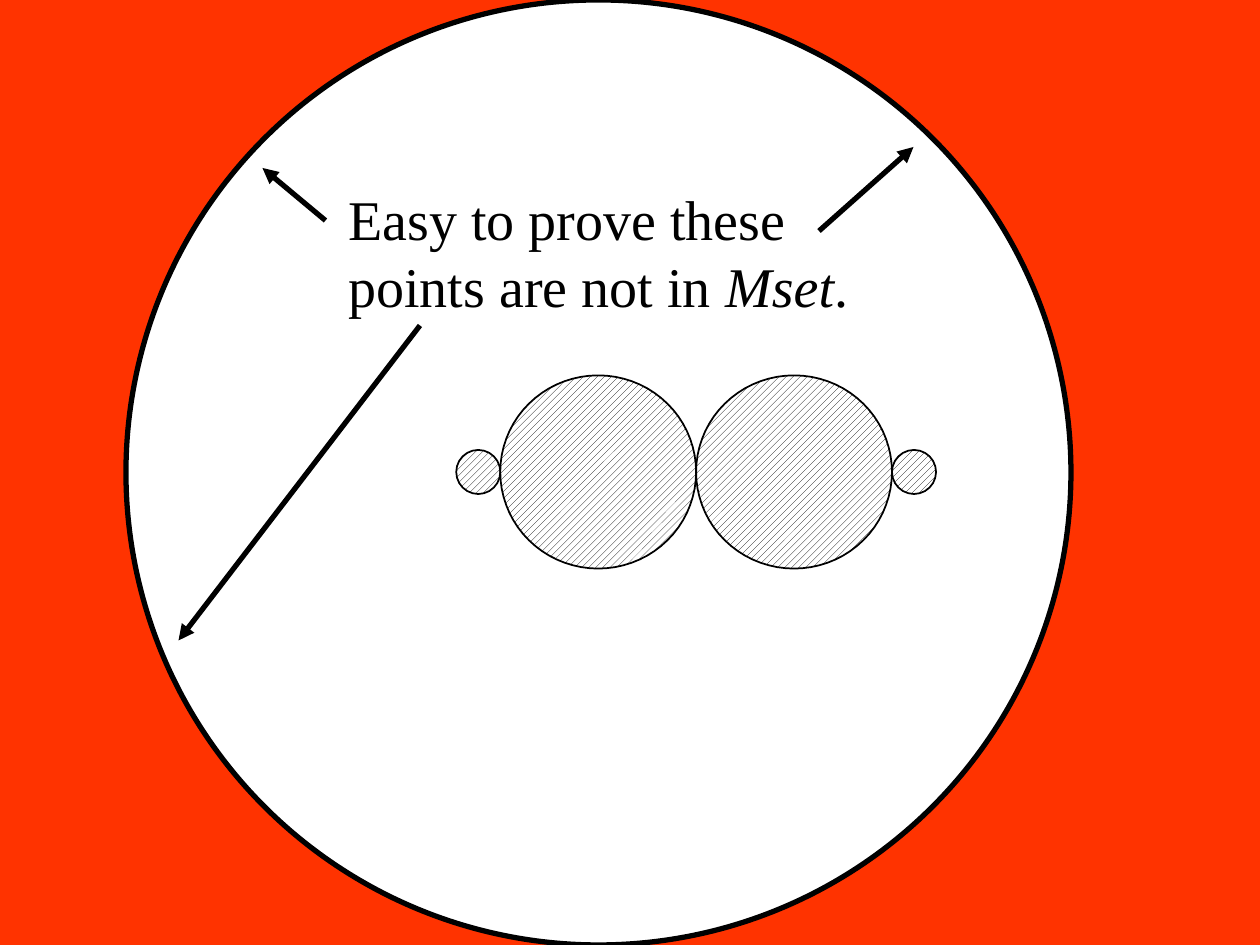
import math
from dataclasses import dataclass

from lxml import etree
from pptx import Presentation, util as u
from pptx.dml.color import RGBColor
from pptx.enum import dml, shapes, text
from pptx.oxml.ns import qn

COLS, ROWS = 120, 90
CELL = u.Inches(10) / COLS


@dataclass(frozen=True)
class Theme:
    back: RGBColor = RGBColor(0xFF, 0x33, 0x00)
    paper: RGBColor = RGBColor(0xFF, 0xFF, 0xFF)
    ink: RGBColor = RGBColor(0, 0, 0)
    font: str = "Times New Roman"
    size: u.Pt = u.Pt(32)
    heavy: u.Pt = u.Pt(3)
    thin: u.Pt = u.Pt(1)


T = Theme()


def emu(*cells):
    return [u.Emu(round(c * CELL)) for c in cells]


def apply(obj, formats):
    for name, value in formats.items():
        setattr(obj, name, value)


def outline(sp, width):
    sp.line.color.rgb = T.ink
    sp.line.width = width


def disc(s, box):
    """White disc with a heavy rim."""
    sp = s.shapes.add_shape(shapes.MSO_SHAPE.OVAL, *emu(*box))
    sp.shadow.inherit = False
    sp.fill.solid()
    sp.fill.fore_color.rgb = T.paper
    outline(sp, T.heavy)


def bulb(s, box, sides):
    """Hatched round outline drawn as a polygon."""
    x, y, w, h = box
    angles = [2 * math.pi * i / sides for i in range(sides)]
    points = [emu(x + w / 2 * (1 + math.cos(a)), y + h / 2 * (1 + math.sin(a)))
              for a in angles]
    builder = s.shapes.build_freeform(*points[0])
    builder.add_line_segments(points[1:], close=True)
    sp = builder.convert_to_shape()
    sp.shadow.inherit = False
    sp.fill.patterned()
    sp.fill.pattern = dml.MSO_PATTERN.WIDE_UPWARD_DIAGONAL
    sp.fill.fore_color.rgb = T.ink
    sp.fill.back_color.rgb = T.paper
    outline(sp, T.thin)


def bulb_chain(s, box, small):
    """Two large bulbs side by side, with a small one at each end."""
    x, y, w, h = box
    large = w / 2 - small
    for width, height, sides in ((small, small, 24), (large, h, 72),
                                 (large, h, 72), (small, small, 24)):
        bulb(s, (x, y + (h - height) / 2, width, height), sides)
        x += width


def caption(s, box, parts):
    """Wrapped sentence of (wording, italic) parts."""
    tf = s.shapes.add_textbox(*emu(*box)).text_frame
    apply(tf, {"word_wrap": True,
               "auto_size": text.MSO_AUTO_SIZE.SHAPE_TO_FIT_TEXT})
    p = tf.paragraphs[0]
    for wording, italic in parts:
        r = p.add_run()
        r.text = wording
        apply(r.font, {"name": T.font, "size": T.size, "italic": italic})
        r.font.color.rgb = T.ink


def arrows(s, box, pairs):
    """Heavy arrows, their ends counted from the corner of the box."""
    x, y = box[:2]
    for (x1, y1), (x2, y2) in pairs:
        line = s.shapes.add_connector(shapes.MSO_CONNECTOR.STRAIGHT,
                                      *emu(x + x1, y + y1, x + x2, y + y2))
        outline(line, T.heavy)
        etree.SubElement(line.line._get_or_add_ln(), qn("a:tailEnd"),
                         type="triangle")
        etree.SubElement(line._element.spPr, qn("a:effectLst"))


def main():
    prs = Presentation()
    prs.slide_width, prs.slide_height = emu(COLS, ROWS)
    s = prs.slides.add_slide(prs.slide_layouts[6])
    s.background.fill.solid()
    s.background.fill.fore_color.rgb = T.back

    circle = (12, 0, ROWS, ROWS)
    disc(s, circle)
    bulb_chain(s, (43.45, 35.75, 45.7, 18.4), small=4.2)
    caption(s, (32, 17, 56.8, 14),
            [("Easy to prove these points are not in", False),
             (" Mset", True), (".", False)])
    arrows(s, circle, [((19, 21), (13, 16)),
                       ((66, 22), (75, 14)),
                       ((28, 31), (5, 61))])
    prs.save("out.pptx")


if __name__ == "__main__":
    main()
